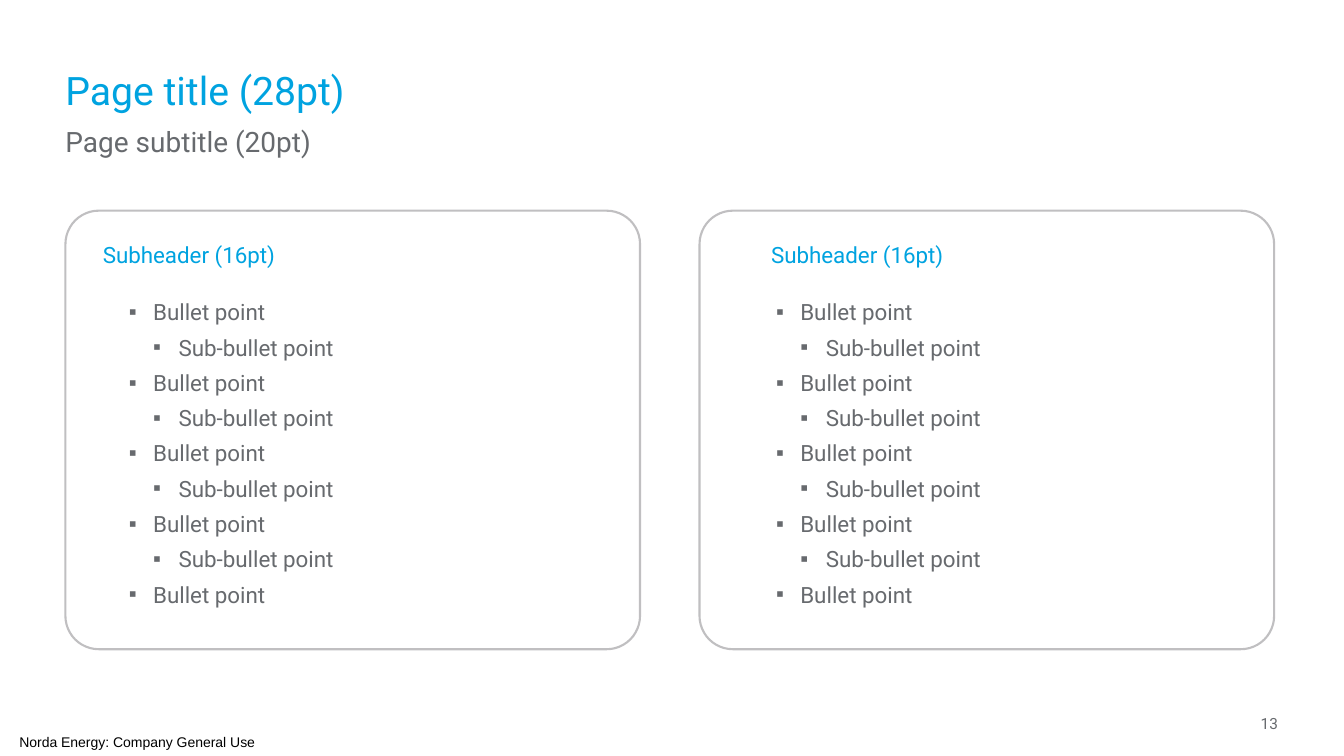
from lxml.etree import SubElement
from pptx import Presentation
from pptx.dml.color import RGBColor
from pptx.enum.shapes import MSO_SHAPE as Shape
from pptx.enum.text import MSO_ANCHOR as Anchor, MSO_AUTO_SIZE as AutoSize, PP_ALIGN as Align
from pptx.oxml.ns import qn
from pptx.util import Cm, Pt

BLUE = RGBColor(0x00, 0xA3, 0xE0)
GREY = RGBColor(0x67, 0x6A, 0x6E)
OUTLINE = RGBColor(0xC0, 0xBF, 0xC1)
BLACK = RGBColor(0x00, 0x00, 0x00)

COMPARISON_LAYOUT = 4
BULLETS = [("Bullet point", 1), ("Sub-bullet point", 2)] * 4 + [("Bullet point", 1)]
INDENTS = {1: (Cm(1.27), Cm(-0.61)), 2: (Cm(1.91), Cm(-0.64))}

# Per column: card left, subheader left and width, list left and width (cm)
COLUMNS = [
    (1.65, 2.59, 15.04, 2.59, 9.8),
    (17.63, 19.43, 13.54, 18.9, 7.87),
]


def place(box, left, top, width, height):
    box.left, box.top, box.width, box.height = Cm(left), Cm(top), Cm(width), Cm(height)


def prepare_frame(box, anchor=Anchor.TOP, inset=0.13):
    frame = box.text_frame
    frame.word_wrap = True
    frame.auto_size = AutoSize.NONE
    frame.vertical_anchor = anchor
    frame.margin_left = frame.margin_right = 0
    frame.margin_top = frame.margin_bottom = Cm(inset)
    return frame


def write(para, text, size, color, align=Align.LEFT, before=6, font="Roboto"):
    para.alignment = align
    para.line_spacing = 1.0
    para.space_before = Pt(before)
    span = para.add_run()
    span.text = text
    span.font.name = font
    span.font.size = Pt(size)
    span.font.bold = False
    span.font.color.rgb = color


def add_heading(box, text, size, color):
    write(prepare_frame(box).paragraphs[0], text, size, color)


def add_label(page, text, area, size, color, align, inset, font):
    box = page.shapes.add_textbox(0, 0, 0, 0)
    place(box, *area)
    para = prepare_frame(box, Anchor.MIDDLE, inset).paragraphs[0]
    write(para, text, size, color, align, 0, font)


def set_bullet(para, level):
    para.level = level
    margin, hanging = INDENTS[level]
    properties = para._p.get_or_add_pPr()
    properties.set("marL", str(margin))
    properties.set("indent", str(hanging))
    SubElement(properties, qn("a:buChar")).set("char", "▪")


def add_bullets(box):
    frame = prepare_frame(box)
    for number, (text, level) in enumerate(BULLETS):
        para = frame.add_paragraph() if number else frame.paragraphs[0]
        write(para, text, 16, GREY)
        set_bullet(para, level)


def add_card(page, left):
    card = page.shapes.add_shape(Shape.ROUNDED_RECTANGLE, 0, 0, 0, 0)
    place(card, left, 5.31, 14.48, 11.05)
    card.adjustments[0] = 0.076
    card.shadow.inherit = False
    card.fill.background()
    card.line.color.rgb = OUTLINE
    card.line.width = Pt(1.5)


def main():
    deck = Presentation()
    deck.slide_width, deck.slide_height = Cm(33.87), Cm(19.05)
    page = deck.slides.add_slide(deck.slide_layouts[COMPARISON_LAYOUT])
    title, *bodies = page.placeholders

    place(title, 1.65, 1.55, 12.57, 1.45)
    add_heading(title, "Page title (28pt)", 28, BLUE)
    subtitle = page.shapes.add_textbox(0, 0, 0, 0)
    place(subtitle, 1.65, 3.02, 12.57, 1.45)
    add_heading(subtitle, "Page subtitle (20pt)", 20, GREY)

    for column, subheader, bullets in zip(COLUMNS, bodies[::2], bodies[1::2]):
        card_left, head_left, head_width, list_left, list_width = column
        add_card(page, card_left)
        place(subheader, head_left, 5.94, head_width, 1.45)
        add_heading(subheader, "Subheader (16pt)", 16, BLUE)
        place(bullets, list_left, 7.39, list_width, 8.66)
        add_bullets(bullets)

    add_label(page, "13", (31.22, 17.91, 0.99, 0.64), 11, GREY, Align.RIGHT, 0.13, "Roboto")
    add_label(page, "Norda Energy: Company General Use", (0, 18.36, 6.91, 0.69),
              10, BLACK, Align.CENTER, 0, "Arial")
    deck.save("out.pptx")


if __name__ == "__main__":
    main()
